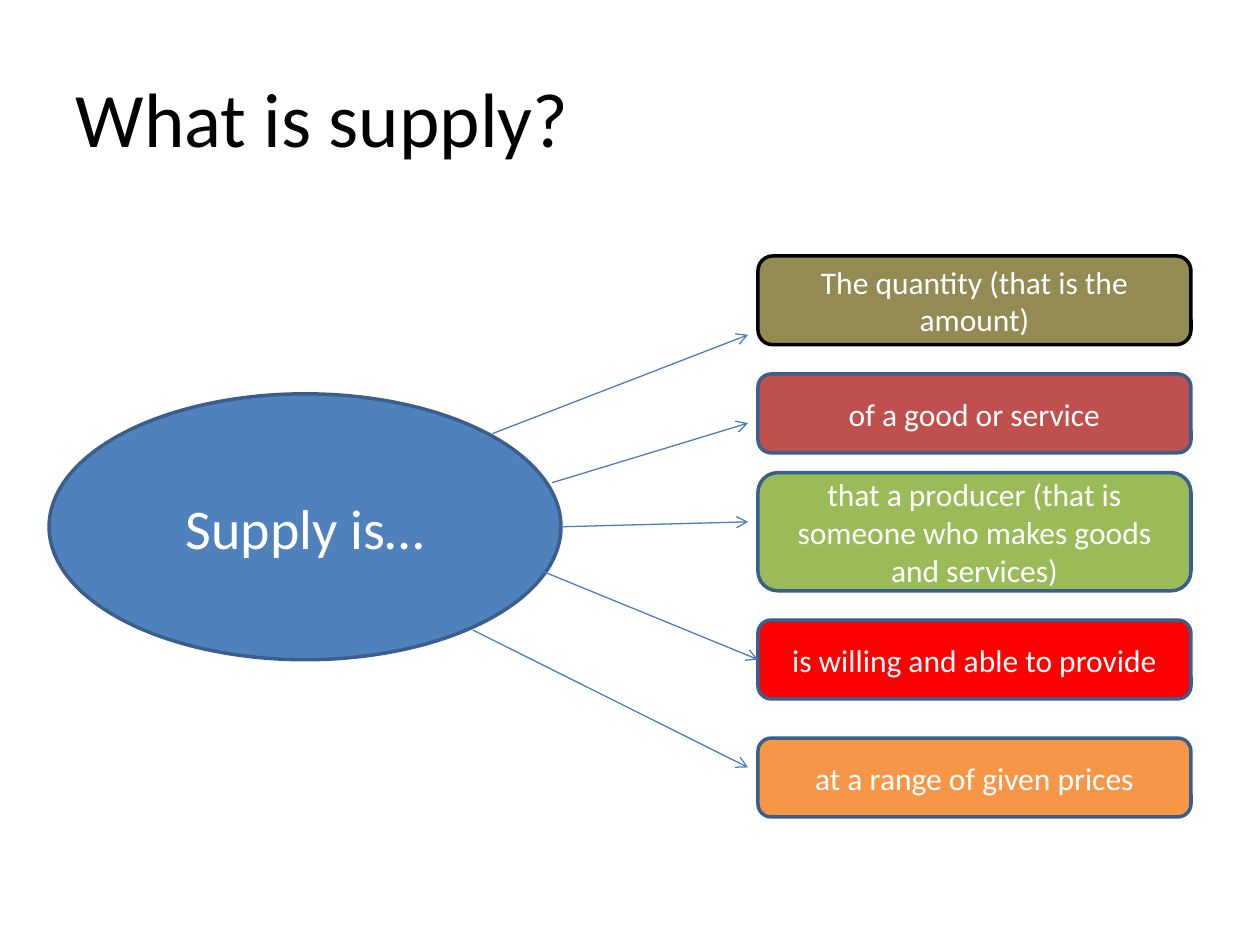
from pptx import Presentation
from pptx.dml.color import RGBColor
from pptx.enum.shapes import MSO_CONNECTOR, MSO_SHAPE
from pptx.enum.text import MSO_ANCHOR, PP_ALIGN
from pptx.oxml.ns import qn
from pptx.util import Cm, Pt
from lxml.etree import SubElement

# Content
TITLE = "What is supply?"
HUB = "Supply is…"
# text, fill, outline, top, height, arrow start, arrow end (None: joined to the box)
PARTS = [
    ("The quantity (that is the amount)", "khaki", "black", 5.16, 1.79, (9.93, 8.74), (15.08, 6.75)),
    ("of a good or service", "brick", "outline", 7.54, 1.59, (11.13, 9.73), (15.08, 8.53)),
    ("that a producer (that is someone who makes goods and services)",
     "green", "outline", 9.53, 2.38, (11.31, 10.62), (15.08, 10.52)),
    ("is willing and able to provide", "red", "outline", 12.5, 1.59, (10.92, 11.51), None),
    ("at a range of given prices", "orange", "outline", 14.88, 1.59, (9.53, 12.7), (15.08, 15.47)),
]

# Layout in centimetres
TITLE_BOX = (1.27, 0.76, 22.86, 3.18)
HUB_BOX = (0.99, 7.94, 10.32, 5.36)
PART_LEFT, PART_WIDTH = 15.28, 8.73

THEME = {
    "font": "Calibri",
    "sizes": {"title": 44, "hub": 32, "part": 18},
    "lines": {"shape": 2, "arrow": 0.75},
    "colors": {
        "black": "000000", "white": "FFFFFF", "blue": "4F81BD", "outline": "3A5F8C",
        "arrow": "4B7EBC", "khaki": "948A54", "brick": "C0504D", "green": "9BBB59",
        "red": "FF0000", "orange": "F79646",
    },
}


def color(name):
    return RGBColor.from_string(THEME["colors"][name])


def write(shape, text, size, color_name, alignment):
    frame = shape.text_frame
    frame.text = text
    frame.word_wrap = True
    frame.vertical_anchor = MSO_ANCHOR.MIDDLE
    paragraph = frame.paragraphs[0]
    paragraph.alignment = alignment
    font = paragraph.runs[0].font
    font.name = THEME["font"]
    font.size = Pt(THEME["sizes"][size])
    font.color.rgb = color(color_name)


def add_bubble(slide, kind, box, text, size, fill, outline):
    shape = slide.shapes.add_shape(kind, *map(Cm, box))
    shape.shadow.inherit = False
    shape.fill.solid()
    shape.fill.fore_color.rgb = color(fill)
    shape.line.color.rgb = color(outline)
    shape.line.width = Pt(THEME["lines"]["shape"])
    write(shape, text, size, "white", PP_ALIGN.CENTER)
    return shape


def add_arrow(slide, start, end, target):
    arrow = slide.shapes.add_connector(MSO_CONNECTOR.STRAIGHT, *map(Cm, start + (end or start)))
    if end is None:
        arrow.end_connect(target, 1)
    arrow.line.color.rgb = color("arrow")
    arrow.line.width = Pt(THEME["lines"]["arrow"])
    properties = arrow.line._get_or_add_ln()
    SubElement(properties, qn("a:tailEnd"), type="arrow")
    SubElement(properties.getparent(), qn("a:effectLst"))


def main():
    presentation = Presentation()
    presentation.slide_width, presentation.slide_height = Cm(25.4), Cm(19.05)
    slide = presentation.slides.add_slide(presentation.slide_layouts[5])

    # Title
    title = slide.shapes.title
    title.left, title.top, title.width, title.height = map(Cm, TITLE_BOX)
    write(title, TITLE, "title", "black", PP_ALIGN.LEFT)

    # Hub, then each part of the definition with its arrow
    add_bubble(slide, MSO_SHAPE.OVAL, HUB_BOX, HUB, "hub", "blue", "outline")
    for text, fill, outline, top, height, start, end in PARTS:
        box = (PART_LEFT, top, PART_WIDTH, height)
        part = add_bubble(slide, MSO_SHAPE.ROUNDED_RECTANGLE, box, text, "part", fill, outline)
        add_arrow(slide, start, end, part)

    presentation.save("out.pptx")


if __name__ == "__main__":
    main()
